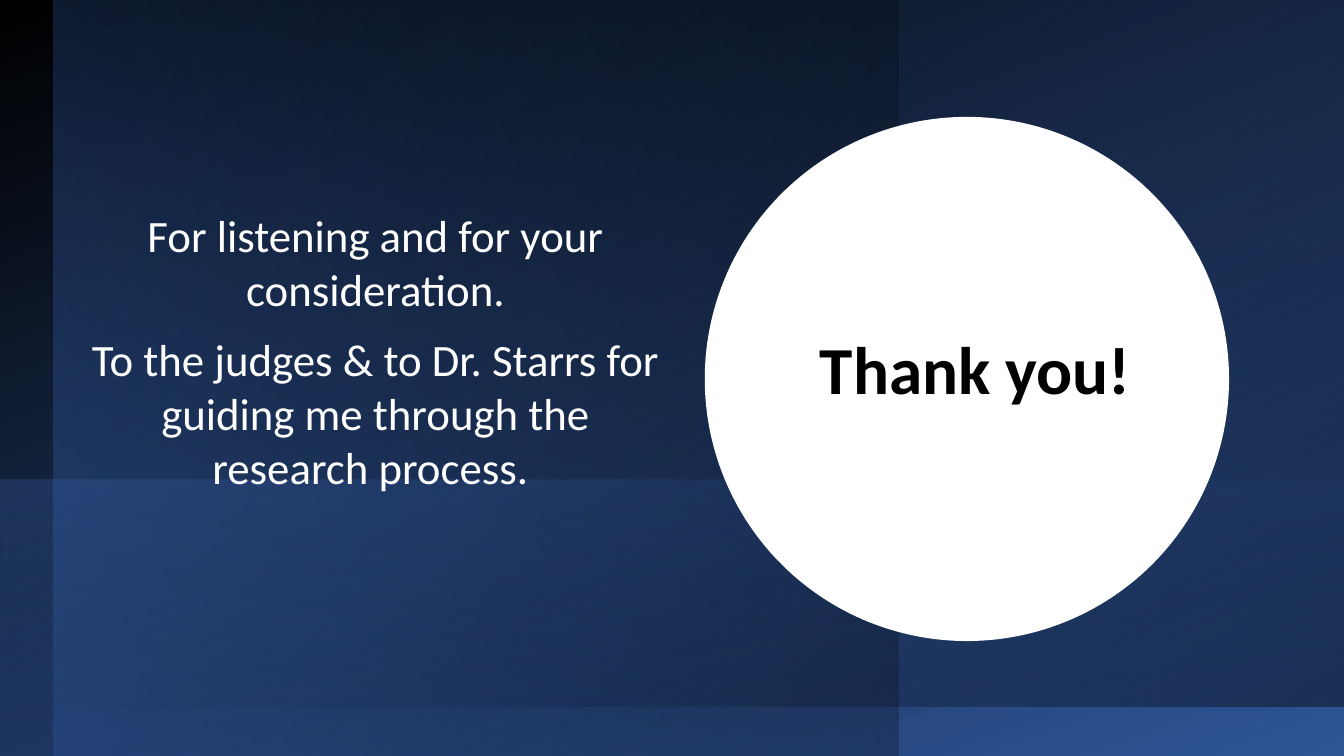
from dataclasses import dataclass

from lxml.etree import SubElement
from pptx import Presentation
from pptx.dml.color import RGBColor
from pptx.enum.shapes import MSO_SHAPE as Kind
from pptx.enum.text import MSO_ANCHOR as Anchor, MSO_AUTO_SIZE as Fit, PP_ALIGN as Align
from pptx.oxml.ns import qn
from pptx.util import Inches, Pt


@dataclass(frozen=True)
class Theme:
    font: str = "Calibri"
    head: int = 48
    body: int = 32
    black: str = "000000"
    white: str = "FFFFFF"
    deep: str = "203864"
    blue: str = "2F5597"
    light: str = "4472C4"


@dataclass(frozen=True)
class Stop:
    color: str
    alpha: int = 100
    place: float = 0


@dataclass(frozen=True)
class Panel:
    box: tuple[float, float, float, float]
    angle: int
    start: Stop
    end: Stop
    turn: int = 0
    flip: bool = True


THEME = Theme()
WIDE, HIGH = 13.33, 7.5
PANELS = [
    Panel((0, 0, WIDE, HIGH), 110, Stop(THEME.black), Stop(THEME.blue, place=1)),
    Panel((0.53, 0, 8.38, HIGH), 200, Stop(THEME.blue, 45), Stop(THEME.black, 29, 1)),
    Panel((0.53, 0, 12.81, 7.01), 300, Stop(THEME.light, 0), Stop(THEME.black, 41, 1),
          turn=180),
    Panel((5.3, -0.54, 2.74, WIDE), 170, Stop(THEME.light, 24), Stop(THEME.deep, 0, 0.78),
          turn=270, flip=False),
]


def add_form(slide, kind: Kind, box: tuple):
    """Add a preset shape without line or shadow."""
    form = slide.shapes.add_shape(kind, *map(Inches, box))
    form.shadow.inherit = False
    form.line.fill.background()
    return form


def add_panel(slide, panel: Panel) -> None:
    form = add_form(slide, Kind.RECTANGLE, panel.box)
    form.rotation = panel.turn
    if panel.flip:
        form._element.spPr.find(qn("a:xfrm")).set("flipH", "1")
    fill = form.fill
    fill.gradient()
    fill.gradient_angle = 360 - panel.angle  # counted anticlockwise
    for stop, data in zip(fill.gradient_stops, (panel.start, panel.end)):
        stop.position = data.place
        stop.color.rgb = RGBColor.from_string(data.color)
        if data.alpha < 100:
            tint = stop._gs.find(qn("a:srgbClr"))
            SubElement(tint, qn("a:alpha")).set("val", str(data.alpha * 1000))


def add_text(para, text: str, *, size: int, color: str, bold: bool = False,
             after: float = 0, line: float = 1.0) -> None:
    para.alignment = Align.CENTER
    para.space_before = Pt(0)
    para.space_after = Pt(after)
    para.line_spacing = line
    run = para.add_run()
    run.text = text
    font = run.font
    font.name, font.size, font.bold = THEME.font, Pt(size), bold
    font.color.rgb = RGBColor.from_string(color)


def set_title(slide) -> None:
    title = slide.shapes.title
    slide.shapes._spTree.append(title._element)  # bring to front
    title.left, title.top, title.width, title.height = map(Inches, (7.93, 3.08, 3.49, 1.03))
    frame = title.text_frame
    frame.word_wrap = True
    frame.auto_size = Fit.NONE
    frame.vertical_anchor = Anchor.BOTTOM
    add_text(frame.paragraphs[0], "Thank you!", size=THEME.head, color=THEME.black,
             bold=True, line=0.9)


def add_thanks(slide) -> None:
    frame = slide.shapes.add_textbox(*map(Inches, (0.78, 2.01, 5.89, 2.96))).text_frame
    frame.word_wrap = True
    frame.auto_size = Fit.SHAPE_TO_FIT_TEXT
    look = dict(size=THEME.body, color=THEME.white)
    add_text(frame.paragraphs[0], "For listening and for your consideration.",
             after=12, **look)
    add_text(frame.add_paragraph(),
             "To the judges & to Dr. Starrs for guiding me through the research process. ",
             after=6, **look)


def main() -> None:
    deck = Presentation()
    deck.slide_width, deck.slide_height = Inches(WIDE), Inches(HIGH)
    slide = deck.slides.add_slide(deck.slide_layouts[5])
    for panel in PANELS:
        add_panel(slide, panel)
    disc = add_form(slide, Kind.OVAL, (6.99, 1.16, 5.2, 5.2))
    disc.fill.solid()
    disc.fill.fore_color.rgb = RGBColor.from_string(THEME.white)
    set_title(slide)
    add_thanks(slide)
    deck.save("out.pptx")


if __name__ == "__main__":
    main()
